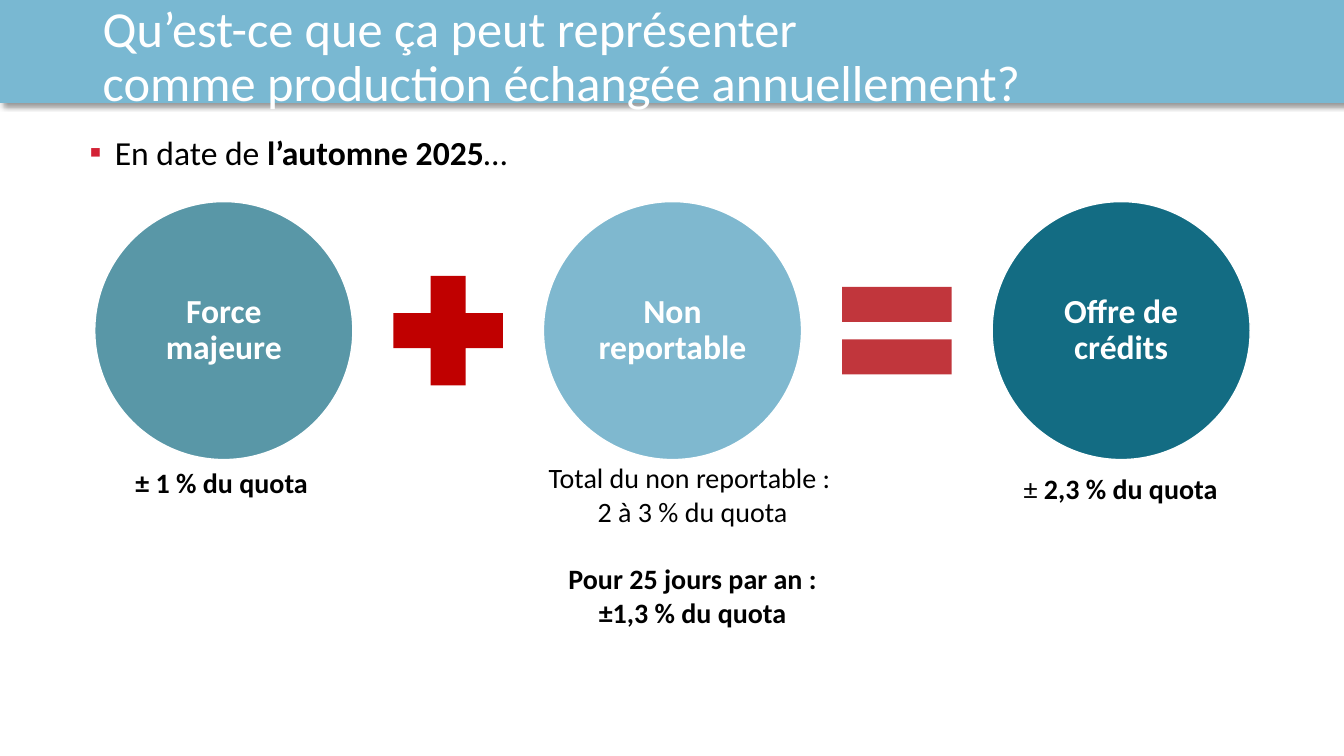
from lxml import etree
from pptx import Presentation
from pptx.dml.color import RGBColor
from pptx.enum.shapes import MSO_SHAPE
from pptx.enum.text import MSO_ANCHOR, PP_ALIGN
from pptx.oxml.ns import qn
from pptx.util import Inches, Pt

RECT, OVAL = MSO_SHAPE.RECTANGLE, MSO_SHAPE.OVAL
PLUS, EQUAL = MSO_SHAPE.MATH_PLUS, MSO_SHAPE.MATH_EQUAL
LEFT, CENTER = PP_ALIGN.LEFT, PP_ALIGN.CENTER
TOP, MIDDLE = MSO_ANCHOR.TOP, MSO_ANCHOR.MIDDLE
BLACK, WHITE, SKY, TEAL = "000000", "FFFFFF", "79B8D2", "136C83"


def paint(code):
    return RGBColor.from_string(code)


def sub(node, tag, **attrs):
    return etree.SubElement(node, qn(tag), attrs)


def write(frame, paras, size=20, color=BLACK, align=CENTER, anchor=TOP,
          margin=None, spacing=None, gaps=None, bullet=None):
    """Each paragraph is a list of (text, bold) runs; gaps maps index to space before."""
    frame.word_wrap = True
    frame.vertical_anchor = anchor
    if margin is not None:
        frame.margin_left = frame.margin_right = Inches(margin)
        frame.margin_top = frame.margin_bottom = Inches(margin)
    for i, runs in enumerate(paras):
        para = frame.add_paragraph() if i else frame.paragraphs[0]
        para.alignment = align
        if spacing:
            para.line_spacing = spacing
        if gaps and i in gaps:
            para.space_before = Pt(gaps[i])
        if bullet:
            props = para._p.get_or_add_pPr()
            props.set("marL", str(Inches(0.25)))
            props.set("indent", str(Inches(-0.25)))
            sub(sub(props, "a:buClr"), "a:srgbClr", val=bullet)
            sub(props, "a:buFont", typeface="Calibri")
            sub(props, "a:buChar", char="▪")
        for text, bold in runs:
            for j, line in enumerate(text.split("\n")):
                if j:
                    para.add_line_break()
                run = para.add_run()
                run.text = line
                run.font.name = "Calibri"
                run.font.size = Pt(size)
                run.font.bold = bold
                run.font.color.rgb = paint(color)


def label(slide, box, paras, **style):
    area = slide.shapes.add_textbox(*map(Inches, box))
    write(area.text_frame, paras, **style)


def block(slide, kind, box, fill, line=None, alpha=None):
    shape = slide.shapes.add_shape(kind, *map(Inches, box))
    shape.shadow.inherit = False
    shape.fill.solid()
    shape.fill.fore_color.rgb = paint(fill)
    if alpha:
        tint = shape._element.spPr.find(qn("a:solidFill"))[0]
        sub(tint, "a:alpha", val=str(alpha * 1000))
    if line:
        shape.line.color.rgb = paint(line)
        shape.line.width = Pt(1)
    else:
        shape.line.fill.background()
    return shape


def header(slide, box):
    left, top, width, height = box
    band = block(slide, RECT, box, SKY, line=SKY)
    effects = band._element.spPr.find(qn("a:effectLst"))
    shade = sub(effects, "a:outerShdw", blurRad=str(Pt(4)), dist=str(Pt(3)),
                dir="2700000", algn="tl", rotWithShape="0")
    sub(sub(shade, "a:srgbClr", val=BLACK), "a:alpha", val="40000")
    title = "Qu’est-ce que ça peut représenter\ncomme production échangée annuellement?"
    label(slide, (left + 0.92, top + 0.23, 10.42, height - 0.33),
          [[(title, False)]], size=36, color=WHITE, align=LEFT,
          anchor=MIDDLE, spacing=0.9)


def intro(slide, box):
    label(slide, box, [[("En date de ", False), ("l’automne 2025", True), ("…", False)]],
          size=24, align=LEFT, bullet="D32235")


def formula(slide, box):
    left, top, width, size = box
    step = (width - size) / 2
    sign = 1.48
    terms = [("Force majeure", TEAL, 70), ("Non reportable", "4A9BBC", 70),
             ("Offre de crédits", TEAL, None)]
    for i, (name, fill, alpha) in enumerate(terms):
        disc = block(slide, OVAL, (left + i * step, top, size, size), fill, WHITE, alpha)
        write(disc.text_frame, [[(name, True)]], size=24, color=WHITE,
              anchor=MIDDLE, margin=0.04, spacing=0.9)
    for i, (kind, fill) in enumerate([(PLUS, "C00000"), (EQUAL, "C1363C")]):
        mid = left + size / 2 + (i + 0.5) * step
        block(slide, kind, (mid - sign / 2, top + (size - sign) / 2, sign, sign), fill)


def notes(slide, box):
    left, top, width, height = box
    label(slide, (left, top + 0.05, 2.58, 0.77), [[("± 1 % du quota ", True)]])
    label(slide, (left + 3.88, top, 4.1, height),
          [[("Total du non reportable : ", False)],
           [("2 à 3 % du quota", False)],
           [("Pour 25 jours par an :\n±1,3 % du quota", True)]], gaps={2: 24})
    label(slide, (left + width - 3.27, top + 0.11, 3.27, 0.77),
          [[("± ", False), ("2,3 % du quota", True)]])


def main():
    deck = Presentation()
    deck.slide_width, deck.slide_height = Inches(13.33), Inches(7.5)
    slide = deck.slides.add_slide(deck.slide_layouts[6])
    header(slide, (0, 0, 13.33, 1.02))
    intro(slide, (0.79, 1.26, 11.5, 0.6))
    formula(slide, (0.94, 2, 11.46, 2.56))
    notes(slide, (0.94, 4.52, 11.81, 2.12))
    deck.save("out.pptx")


if __name__ == "__main__":
    main()
